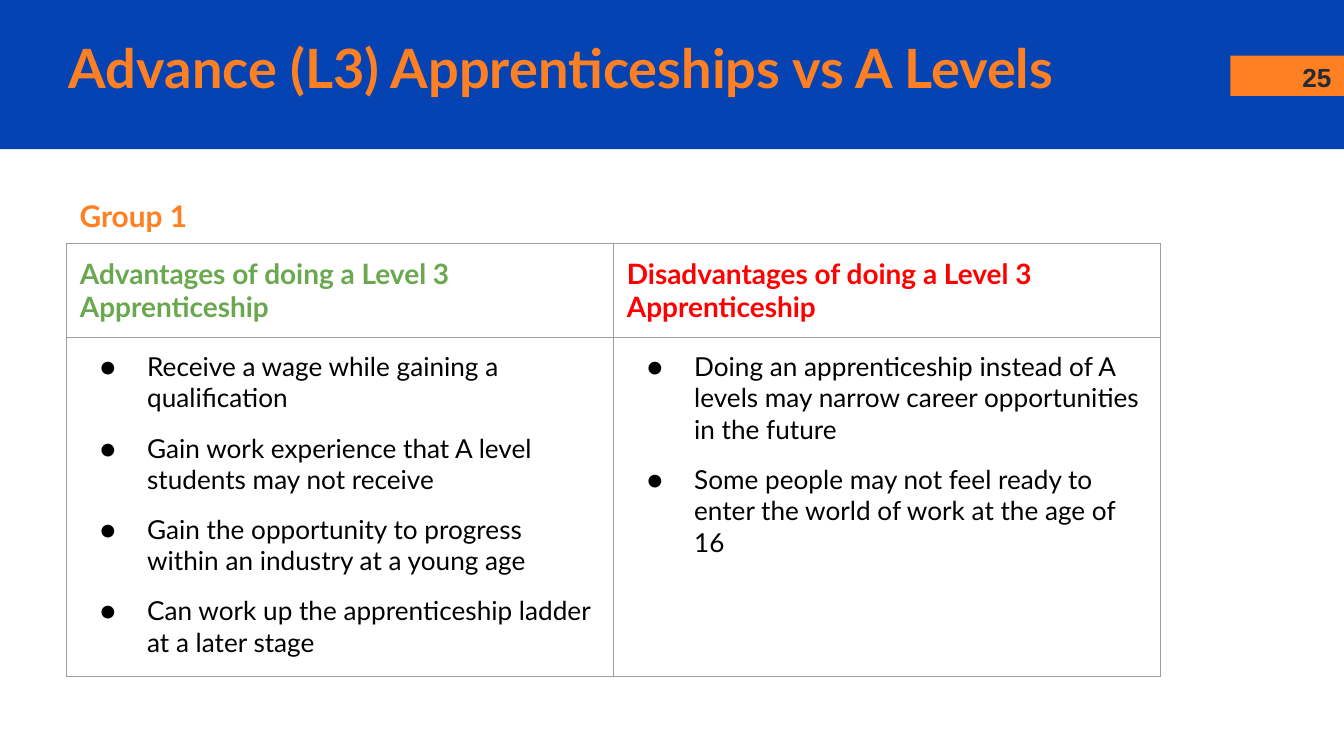
import pptx
import pptx.dml.color
import pptx.enum.shapes
import pptx.enum.text
import pptx.oxml.ns
import pptx.util
from lxml import etree

RGB = pptx.dml.color.RGBColor
BLUE = RGB(0x05, 0x43, 0xB3)
ORANGE = RGB(0xFF, 0x80, 0x22)
GREEN = RGB(0x6A, 0xA8, 0x4F)
RED = RGB(0xFF, 0x00, 0x00)
BLACK = RGB(0x00, 0x00, 0x00)
INK = RGB(0x26, 0x2A, 0x33)
GREY = RGB(0x9E, 0x9E, 0x9E)

COLUMNS, ROWS = 100, 56.25  # grid of the slide, ten units to the inch

ADVANTAGES = [
    "Receive a wage while gaining a qualification",
    "Gain work experience that A level students may not receive",
    "Gain the opportunity to progress within an industry at a young age",
    "Can work up the apprenticeship ladder at a later stage",
]
DISADVANTAGES = [
    "Doing an apprenticeship instead of A levels may narrow career "
    "opportunities in the future",
    "Some people may not feel ready to enter the world of work at the age of 16",
]


def grid(units):
    return pptx.util.Inches(units / 10)


def add_xml(parent, tag, **attributes):
    return etree.SubElement(parent, pptx.oxml.ns.qn(tag), attributes)


def write_text(frame, lines, size, color, bold=False, font="Lato",
               align=None, anchor=None, bullet=None, gap=0):
    """Fill a text frame with one paragraph per line; gap is points between them."""
    frame.word_wrap = True
    if anchor is not None:
        frame.vertical_anchor = anchor
    for index, line in enumerate(lines):
        paragraph = frame.paragraphs[0] if index == 0 else frame.add_paragraph()
        if bullet:
            properties = paragraph._p.get_or_add_pPr()
            properties.set("marL", str(grid(5)))
            properties.set("indent", str(-grid(3.5)))
            add_xml(add_xml(properties, "a:buClr"), "a:srgbClr", val=str(color))
            add_xml(properties, "a:buSzPts", val=str(size * 100))
            add_xml(properties, "a:buFont", typeface=font)
            add_xml(properties, "a:buChar", char=bullet)
        if index and gap:
            paragraph.space_before = pptx.util.Pt(gap)
        if align is not None:
            paragraph.alignment = align
        run = paragraph.add_run()
        run.text = line
        run.font.name = font
        run.font.size = pptx.util.Pt(size)
        run.font.bold = bold
        run.font.color.rgb = color


class ComparisonSlide:
    """Holds the slide and its shared inset and border style."""
    inset = grid(1)
    border_width = pptx.util.Pt(0.75)

    def __init__(self, deck):
        self.slide = deck.slides.add_slide(deck.slide_layouts[6])

    def bar(self, left, top, width, height, color):
        bar = self.slide.shapes.add_shape(
            pptx.enum.shapes.MSO_SHAPE.RECTANGLE,
            *map(grid, (left, top, width, height)))
        bar.shadow.inherit = False
        bar.fill.solid()
        bar.fill.fore_color.rgb = color
        bar.line.fill.background()

    def text(self, left, top, width, height, line, **style):
        box = self.slide.shapes.add_textbox(
            *map(grid, (left, top, width, height)))
        self.set_insets(box.text_frame)
        write_text(box.text_frame, [line], **style)

    def table(self, left, top, column_width, row_heights, cells):
        """Draw rows of (lines, style) pairs as a ruled table."""
        count = len(cells[0])
        table = self.slide.shapes.add_table(
            len(cells), count, grid(left), grid(top),
            grid(column_width * count), grid(sum(row_heights))).table
        table.first_row = table.horz_banding = False
        for column in table.columns:
            column.width = grid(column_width)
        for row, height, contents in zip(table.rows, row_heights, cells):
            row.height = grid(height)
            for cell, (lines, style) in zip(row.cells, contents):
                self.set_insets(cell)
                self.rule(cell)
                cell.fill.background()
                write_text(cell.text_frame, lines, **style)

    def set_insets(self, holder):
        holder.margin_left = holder.margin_right = self.inset
        holder.margin_top = holder.margin_bottom = self.inset

    def rule(self, cell):
        properties = cell._tc.get_or_add_tcPr()
        for side in "LRTB":
            line = add_xml(properties, f"a:ln{side}", w=str(self.border_width))
            add_xml(add_xml(line, "a:solidFill"), "a:srgbClr", val=str(GREY))


def main():
    deck = pptx.Presentation()
    deck.slide_width, deck.slide_height = grid(COLUMNS), grid(ROWS)
    page = ComparisonSlide(deck)

    page.bar(0, 0, COLUMNS, 11.1, BLUE)
    page.bar(91.55, 4.15, 8.45, 3, ORANGE)
    page.text(4.15, 2.2, 84.6, 5.6, "Advance (L3) Apprenticeships vs A Levels",
              size=29, color=ORANGE, bold=True,
              anchor=pptx.enum.text.MSO_ANCHOR.MIDDLE)

    heading = {"size": 15, "bold": True}
    points = {"size": 14, "color": BLACK, "bullet": "●", "gap": 10}
    page.table(4.95, 18.1, 40.7, [7, 25.25], [
        [(["Advantages of doing a Level 3 Apprenticeship"],
          {**heading, "color": GREEN}),
         (["Disadvantages of doing a Level 3 Apprenticeship"],
          {**heading, "color": RED})],
        [(ADVANTAGES, points), (DISADVANTAGES, points)],
    ])
    page.text(4.95, 13.7, 44.7, 4.7, "Group 1", size=16, color=ORANGE, bold=True)
    page.text(94.9, 3.6, 5.15, 2.5, "25", size=14, color=INK, bold=True,
              font="Arial", align=pptx.enum.text.PP_ALIGN.RIGHT)

    deck.save("out.pptx")


if __name__ == "__main__":
    main()
